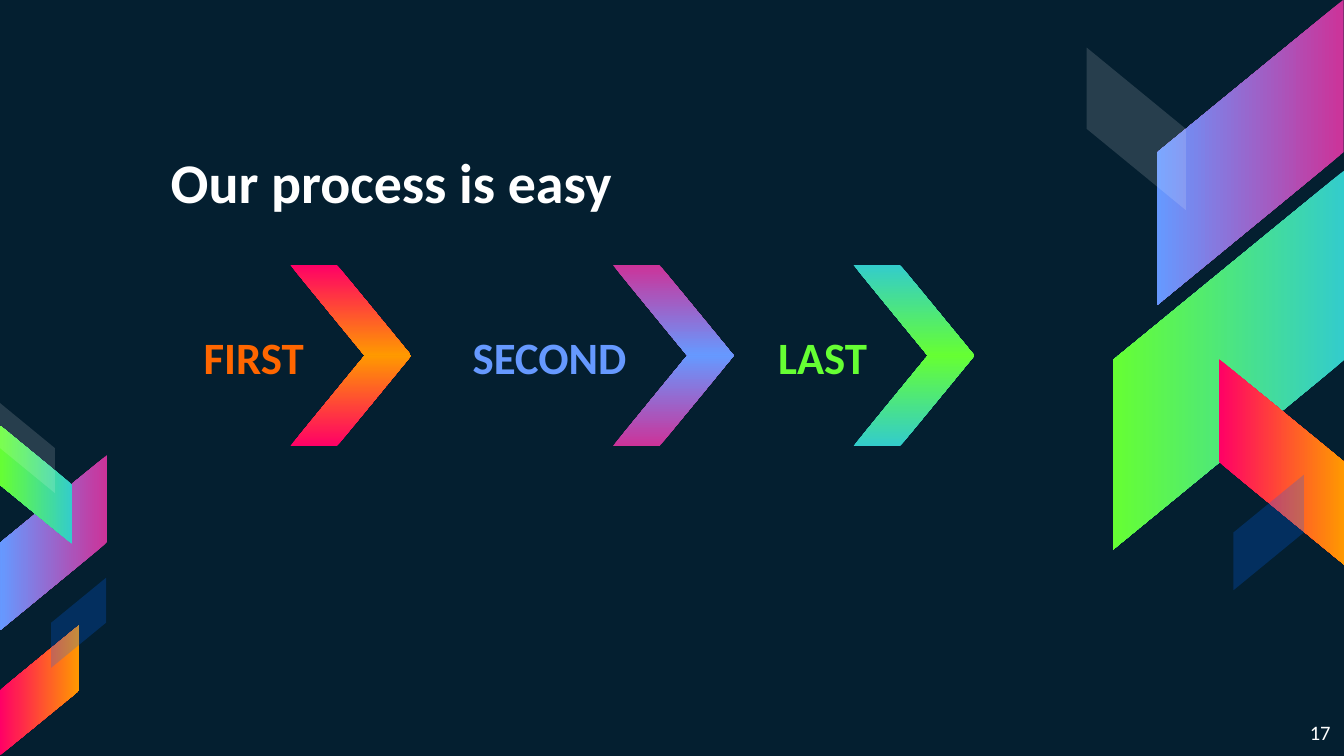
from pptx import Presentation
from pptx import util as u
from pptx.dml.color import RGBColor
from pptx.enum import shapes, text

WIDTH = 10
HEIGHT = WIDTH * 9 / 16
FONT = "Calibri"
PINK, FIRE, LIME = ("CC3399", "6699FF"), ("FF0066", "FF9900"), ("33CCCC", "66FF33")
MIST, NAVY = ("FFFFFF", 14), ("0066FF", 23)  # colour, opacity in percent
SLANT, RATIO = 0.82, 0.61

# left, top, length, turn, flipped, fill
BANDS = [
    (8.17, 0.44, 2.27, 90, True, PINK),
    (7.73, 1.82, 2.82, 90, True, LIME),
    (8.77, 2.97, 1.53, 270, False, FIRE),
    (7.85, 0.59, 1.21, 270, False, MIST),
    (9.01, 3.70, 0.86, 270, True, NAVY),
    (-0.25, 3.64, 1.30, 90, True, PINK),
    (-0.17, 3.34, 0.88, 90, False, LIME),
    (-0.19, 4.84, 0.97, 270, True, FIRE),
    (-0.13, 3.13, 0.67, 270, False, MIST),
    (0.25, 4.43, 0.67, 270, True, NAVY),
]
# label, label colour, label width, arrow left, arrow fill
STEPS = [
    ("FIRST", "FF6600", 1.65, 2.16, FIRE),
    ("SECOND", "6699FF", 2.05, 4.56, PINK),
    ("LAST", "66FF33", 1.65, 6.35, LIME),
]
TOP, WIDE, TALL, LAP = 1.97, 0.9, 1.35, 0.2
HALF = TALL / 2


def rgb(code):
    return RGBColor.from_string(code)


def paint(shape, fill):
    """Fill with a two-colour gradient, or with a colour and its opacity."""
    first, last = fill
    if isinstance(last, str):
        shape.fill.gradient()
        shape.fill.gradient_angle = 270
        for stop, code in zip(shape.fill.gradient_stops, fill):
            stop.color.rgb = rgb(code)
        return
    shape.fill.solid()
    shape.fill.fore_color.rgb = rgb(first)
    tint = shape._element.spPr.find(".//{*}srgbClr")
    alpha = tint.makeelement(tint.tag.replace("srgbClr", "alpha"), {"val": str(last * 1000)})
    tint.append(alpha)


def slab(left, top, wide, high, turn, flip, fill):
    shape = slide.shapes.add_shape(
        shapes.MSO_SHAPE.PARALLELOGRAM, *map(u.Inches, (left, top, wide, high)))
    shape.adjustments[0] = SLANT
    shape.rotation = turn
    if flip:
        shape._element.spPr.find("{*}xfrm").set("flipH", "1")
    shape.shadow.inherit = False
    shape.line.fill.background()
    paint(shape, fill)


def write(shape, box, words, size, code, bold, align, anchor):
    shape.left, shape.top, shape.width, shape.height = map(u.Inches, box)
    frame = shape.text_frame
    frame.text = words
    frame.word_wrap = True
    frame.auto_size = text.MSO_AUTO_SIZE.NONE
    frame.vertical_anchor = anchor
    for side in ("left", "top", "right", "bottom"):
        setattr(frame, "margin_" + side, u.Inches(0.1))
    par = frame.paragraphs[0]
    par.alignment = align
    font = par.runs[0].font
    font.name, font.size, font.bold = FONT, u.Pt(size), bold
    font.color.rgb = rgb(code)


def label(*args):
    write(slide.shapes.add_textbox(0, 0, 0, 0), *args)


deck = Presentation()
deck.slide_width, deck.slide_height = u.Inches(WIDTH), u.Inches(HEIGHT)
slide = deck.slides.add_slide(deck.slide_layouts[5])
slide.background.fill.solid()
slide.background.fill.fore_color.rgb = rgb("041F30")

for left, top, size, turn, flip, fill in BANDS:
    slab(left, top, size, size * RATIO, turn, flip, fill)

LEFT, RIGHT = text.PP_ALIGN.LEFT, text.PP_ALIGN.RIGHT
ANCHOR = text.MSO_ANCHOR
write(slide.shapes.title, (1.17, 1, 6.53, 0.7), "Our process is easy",
      30, "FFFFFF", True, LEFT, ANCHOR.BOTTOM)

for words, code, width, left, fill in STEPS:
    slab(left, TOP, WIDE, HALF, 0, True, fill)
    slab(left, TOP + HALF, WIDE, HALF, 180, False, fill)
    label((left + LAP - width, TOP + 0.01, width, TALL), words,
          24, code, True, RIGHT, ANCHOR.MIDDLE)

label((9.36, 5.26, 0.64, 0.36), "17", 11, "FFFFFF", False, RIGHT, ANCHOR.TOP)

deck.save("out.pptx")
